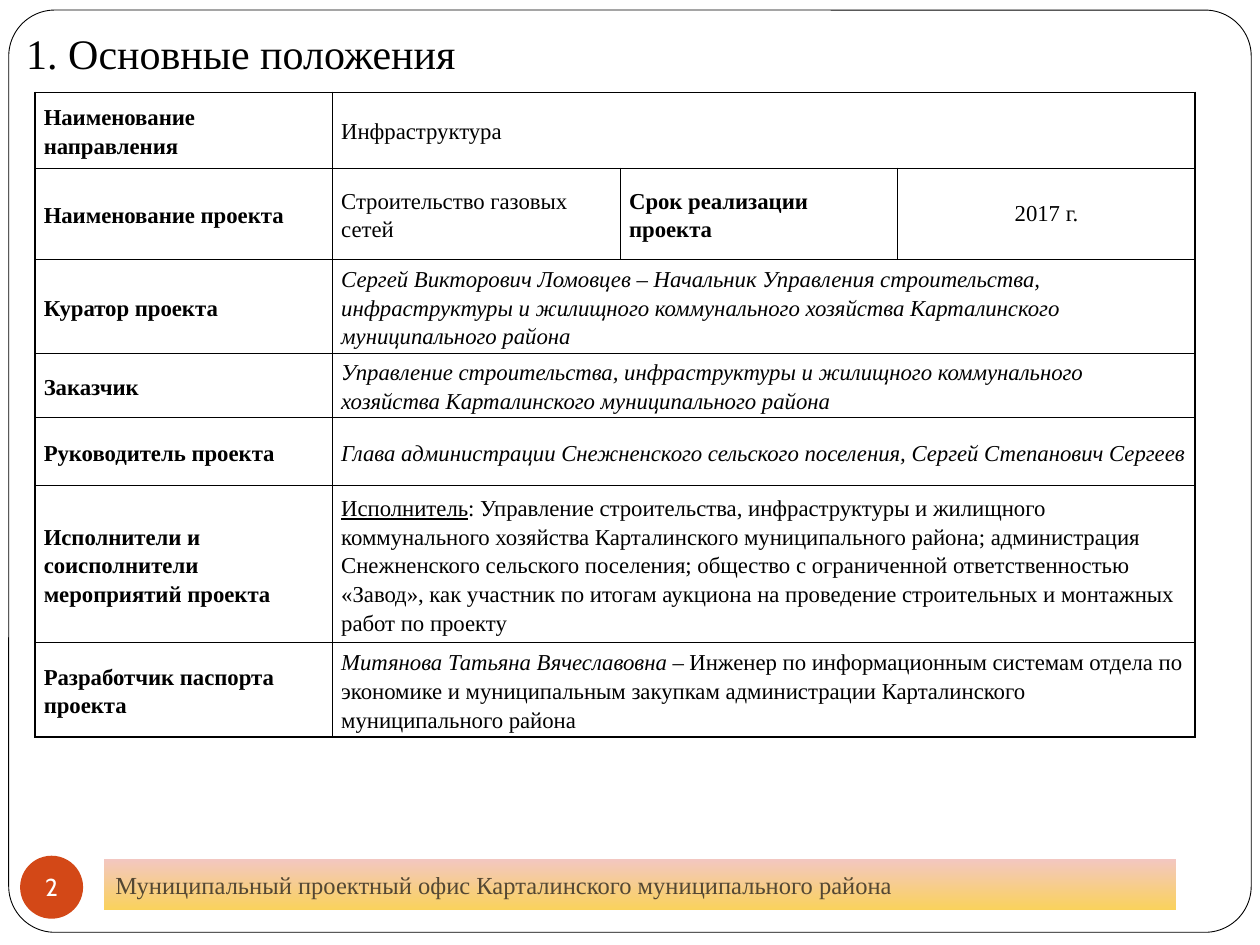
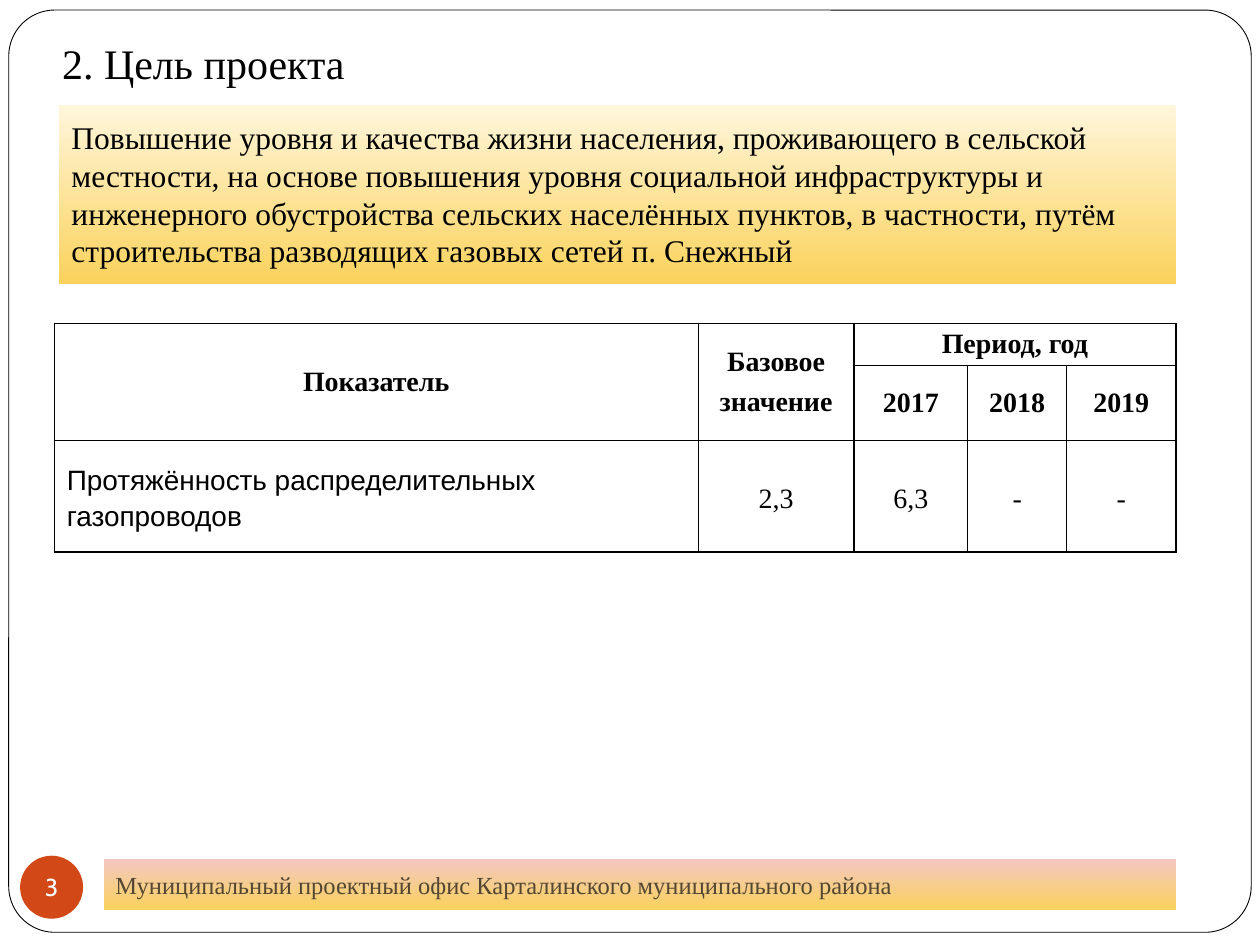
from dataclasses import dataclass, field

import pptx
import pptx.dml.color
import pptx.enum.shapes
import pptx.enum.text
import pptx.oxml
import pptx.oxml.ns
import pptx.util
from pptx.util import Pt

RGB = pptx.dml.color.RGBColor.from_string
SHAPE = pptx.enum.shapes.MSO_SHAPE
ALIGN = pptx.enum.text.PP_ALIGN
ANCHOR = pptx.enum.text.MSO_ANCHOR


@dataclass(frozen=True)
class Theme:
    ink: str = "000000"
    paper: str = "FFFFFF"
    badge: str = "D34817"
    footer_ink: str = "534733"
    footer_grad: tuple[str, str] = ("F3C7C1", "FAD25C")
    goal_grad: tuple[str, str] = ("FFF6DB", "FAD25C")
    serif: str = "Times New Roman"
    sans: str = "Arial"
    number_font: str = "Cabin"
    title: float = 24
    goal: float = 18
    indicator: float = 16
    small: float = 14
    passport: float = 13
    frame_line: float = 0.5
    cell_line: float = 1


THEME = Theme()


@dataclass(frozen=True)
class Box:
    left: float
    top: float
    width: float
    height: float

    def lengths(self) -> tuple:
        return Pt(self.left), Pt(self.top), Pt(self.width), Pt(self.height)


@dataclass(frozen=True)
class Run:
    text: str
    bold: bool = False
    italic: bool = False
    underline: bool = False
    font: str = THEME.serif
    color: str = THEME.ink


@dataclass(frozen=True)
class Para:
    runs: list[Run]
    align: ALIGN = ALIGN.LEFT
    spacing: float = 1.0
    before: float = 0


@dataclass(frozen=True)
class Cell:
    row: int
    col: int
    paras: list[Para]
    rows: int = 1
    cols: int = 1
    indent: float = 0


@dataclass(frozen=True)
class Grid:
    left: float
    top: float
    widths: list[float]
    heights: list[float]
    size: float
    side: float = 0
    fill: str | None = None
    cells: list[Cell] = field(default_factory=list)


FRAME = Box(5, 5.75, 710, 527)
BADGE = Box(11.5, 489, 36, 36)
FOOTER = Box(59.5, 491, 612.5, 29)
GOAL = Box(33.75, 60.25, 638, 102)
FOOTER_TEXT = "Муниципальный проектный офис Карталинского муниципального района"
GOAL_TEXT = (
    "Повышение уровня и качества жизни населения, проживающего в сельской местности, "
    "на основе повышения уровня социальной инфраструктуры и инженерного обустройства "
    "сельских населённых пунктов, в частности, путём строительства разводящих газовых "
    "сетей п. Снежный"
)


def write(tf, paras: list[Para], size: float) -> None:
    for i, para in enumerate(paras):
        p = tf.add_paragraph() if i else tf.paragraphs[0]
        p.alignment = para.align
        p.line_spacing = para.spacing
        p.space_before = Pt(para.before)
        for run in para.runs:
            r = p.add_run()
            r.text = run.text
            r.font.name = run.font
            r.font.size = Pt(size)
            r.font.bold = run.bold
            r.font.italic = run.italic
            r.font.underline = run.underline
            r.font.color.rgb = RGB(run.color)


def set_frame(tf, inset: float, anchor: ANCHOR, wrap: bool = True) -> None:
    tf.word_wrap = wrap
    tf.vertical_anchor = anchor
    tf.margin_left = tf.margin_right = tf.margin_top = tf.margin_bottom = Pt(inset)


def add_shape(slide, kind: SHAPE, box: Box, fill: str):
    sp = slide.shapes.add_shape(kind, *box.lengths())
    sp.shadow.inherit = False
    sp.fill.solid()
    sp.fill.fore_color.rgb = RGB(fill)
    sp.line.fill.background()
    return sp


def add_band(slide, box: Box, grad: tuple[str, str], run: Run, size: float,
             inset: float, anchor: ANCHOR) -> None:
    sp = add_shape(slide, SHAPE.RECTANGLE, box, grad[0])
    sp.fill.gradient()
    sp.fill.gradient_angle = 270
    for stop, color in zip(sp.fill.gradient_stops, grad):
        stop.color.rgb = RGB(color)
    set_frame(sp.text_frame, inset, anchor)
    write(sp.text_frame, [Para([run])], size)


def add_base(prs, number: int, title: str, left: float, top: float):
    slide = prs.slides.add_slide(prs.slide_layouts[6])
    frame = add_shape(slide, SHAPE.ROUNDED_RECTANGLE, FRAME, THEME.paper)
    frame.adjustments[0] = 0.05
    frame.line.color.rgb = RGB(THEME.ink)
    frame.line.width = Pt(THEME.frame_line)
    badge = add_shape(slide, SHAPE.OVAL, BADGE, THEME.badge)
    set_frame(badge.text_frame, 0, ANCHOR.MIDDLE, wrap=False)
    digit = Run(str(number), font=THEME.number_font, color=THEME.paper)
    write(badge.text_frame, [Para([digit], ALIGN.CENTER)], THEME.small)
    tb = slide.shapes.add_textbox(*Box(left, top, 553.5, 37.5).lengths())
    set_frame(tb.text_frame, 6.5, ANCHOR.TOP)
    write(tb.text_frame, [Para([Run(title)])], THEME.title)
    add_band(slide, FOOTER, THEME.footer_grad, Run(FOOTER_TEXT, color=THEME.footer_ink),
             THEME.small, 6.5, ANCHOR.MIDDLE)
    return slide


def add_borders(cell) -> None:
    tc_pr = cell._tc.get_or_add_tcPr()
    for side in "LRTB":
        tc_pr.append(pptx.oxml.parse_xml(
            f'<a:ln{side} {pptx.oxml.ns.nsdecls("a")} w="{Pt(THEME.cell_line)}">'
            f'<a:solidFill><a:srgbClr val="{THEME.ink}"/></a:solidFill></a:ln{side}>'
        ))


def add_grid(slide, grid: Grid) -> None:
    box = Box(grid.left, grid.top, sum(grid.widths), sum(grid.heights))
    table = slide.shapes.add_table(
        len(grid.heights), len(grid.widths), *box.lengths()).table
    table.first_row = table.horz_banding = False
    for column, width in zip(table.columns, grid.widths):
        column.width = Pt(width)
    for row, height in zip(table.rows, grid.heights):
        row.height = Pt(height)
    for cell in table.iter_cells():
        add_borders(cell)
        if grid.fill:
            cell.fill.solid()
            cell.fill.fore_color.rgb = RGB(grid.fill)
        else:
            cell.fill.background()
        cell.margin_left = cell.margin_right = Pt(grid.side)
        cell.margin_top = cell.margin_bottom = 0
        cell.vertical_anchor = ANCHOR.MIDDLE
    for item in grid.cells:
        cell = table.cell(item.row, item.col)
        if item.rows * item.cols > 1:
            cell.merge(table.cell(item.row + item.rows - 1, item.col + item.cols - 1))
        cell.margin_left = Pt(grid.side + item.indent)
        write(cell.text_frame, item.paras, grid.size)


def passport_cells() -> list[Cell]:
    rows = [
        ("Наименование направления", [Run("Инфраструктура")]),
        ("Наименование проекта", [Run("Строительство газовых сетей")]),
        ("Куратор проекта", [Run(
            "Сергей Викторович Ломовцев – Начальник Управления строительства, "
            "инфраструктуры и жилищного коммунального хозяйства Карталинского "
            "муниципального района", italic=True)]),
        ("Заказчик", [Run(
            "Управление строительства, инфраструктуры и жилищного коммунального "
            "хозяйства Карталинского муниципального района", italic=True)]),
        ("Руководитель проекта", [Run(
            "Глава администрации Снежненского сельского поселения, "
            "Сергей Степанович Сергеев", italic=True)]),
        ("Исполнители и соисполнители мероприятий проекта", [
            Run("Исполнитель", underline=True),
            Run(": Управление строительства, инфраструктуры и жилищного коммунального "
                "хозяйства Карталинского муниципального района; администрация "
                "Снежненского сельского поселения; общество с ограниченной "
                "ответственностью «Завод», как участник по итогам аукциона на проведение "
                "строительных и монтажных работ по проекту")]),
        ("Разработчик паспорта проекта", [
            Run("Митянова Татьяна Вячеславовна – ", italic=True),
            Run("Инженер по информационным системам отдела по экономике и муниципальным "
                "закупкам администрации Карталинского муниципального района")]),
    ]
    project_row = 1
    cells = [
        Cell(project_row, 2, [Para([Run("Срок реализации проекта", bold=True)], spacing=1.15)]),
        Cell(project_row, 3, [Para([Run("2017 г.")], ALIGN.CENTER)]),
    ]
    for i, (label, runs) in enumerate(rows):
        cells.append(Cell(i, 0, [Para([Run(label, bold=True)], spacing=1.15)]))
        cells.append(Cell(i, 1, [Para(runs, spacing=1.15)], cols=1 if i == project_row else 3))
    return cells


def heading(text: str, before: float = 0) -> Para:
    return Para([Run(text, bold=True)], ALIGN.CENTER, 0.96, before)


def indicator_cells() -> list[Cell]:
    cells = [
        Cell(0, 0, [heading("Показатель")], rows=2),
        Cell(0, 1, [heading("Базовое"), heading("значение", 6)], rows=2),
        Cell(0, 2, [heading("Период, год")], cols=3),
        Cell(2, 0, [Para([Run("Протяжённость распределительных газопроводов",
                              font=THEME.sans)], spacing=1.15)], indent=7.2),
    ]
    for col, year in enumerate(("2017", "2018", "2019"), start=2):
        cells.append(Cell(1, col, [heading(year)]))
    for col, value in enumerate(("2,3", "6,3", "-", "-"), start=1):
        before = 10 if col == 1 else 0
        cells.append(Cell(2, col, [Para([Run(value)], ALIGN.CENTER, 1.15, before)]))
    return cells


def main() -> None:
    prs = pptx.Presentation()
    prs.slide_width, prs.slide_height = Pt(720), Pt(540)

    basics = add_base(prs, 2, "1. Основные положения", 8.5, 9.5)
    add_grid(basics, Grid(
        left=20, top=52.75, widths=[170, 164.5, 158.5, 170],
        heights=[43.5, 52, 36.5, 36.5, 39, 83.5, 42.5],
        size=THEME.passport, side=5, cells=passport_cells()))

    goal = add_base(prs, 3, "2. Цель проекта", 29, 15)
    add_band(goal, GOAL, THEME.goal_grad, Run(GOAL_TEXT), THEME.goal, 7.2, ANCHOR.TOP)
    add_grid(goal, Grid(
        left=31, top=185, widths=[368, 89, 65, 56.5, 62.5], heights=[24, 37.5, 63.5],
        size=THEME.indicator, fill=THEME.paper, cells=indicator_cells()))

    prs.save("out.pptx")


if __name__ == "__main__":
    main()
